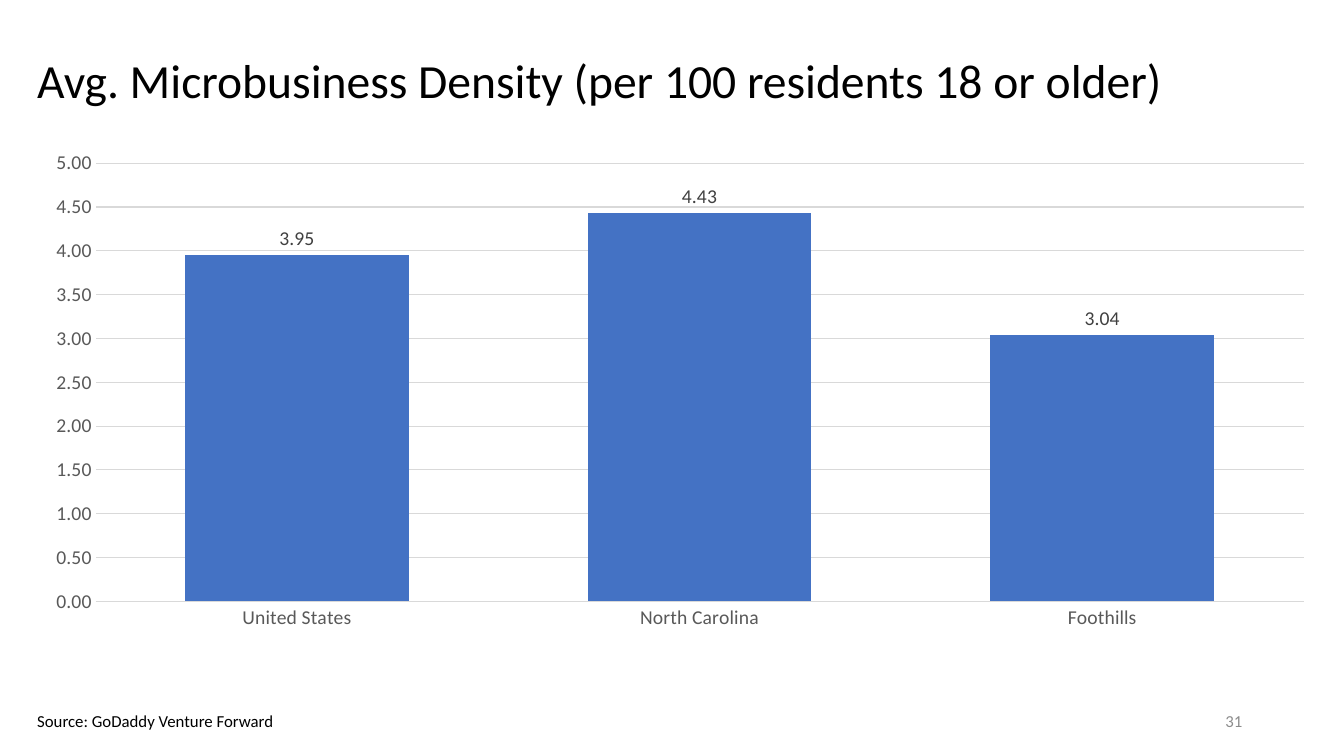
from dataclasses import dataclass

from lxml.etree import SubElement
from pptx import Presentation
from pptx.chart.data import CategoryChartData
from pptx.dml.color import RGBColor
from pptx.enum.chart import XL_CHART_TYPE, XL_LABEL_POSITION, XL_TICK_MARK
from pptx.enum.text import MSO_ANCHOR, PP_ALIGN
from pptx.oxml.ns import qn
from pptx.util import Inches, Pt


@dataclass(frozen=True)
class Theme:
    font: str = "Calibri"
    ink: str = "000000"
    label: str = "404040"
    axis: str = "595959"
    muted: str = "8C8C8C"
    grid: str = "D9D9D9"
    bar: str = "4472C4"
    head: int = 34
    body: int = 14
    small: int = 12
    rule: float = 0.75


class Deck:
    def __init__(self, theme, wide, high):
        self.theme = theme
        self.file = Presentation()
        self.file.slide_width = Inches(wide)
        self.file.slide_height = Inches(high)
        self.slide = self.file.slides.add_slide(self.file.slide_layouts[6])

    def place(self, left, top, width, height):
        """Turn percentages of the slide into lengths."""
        wide, high = self.file.slide_width, self.file.slide_height
        shares = (left, wide), (top, high), (width, wide), (height, high)
        return [int(share * side / 100) for share, side in shares]

    def style(self, font, size, color):
        font.name = self.theme.font
        font.size = Pt(size)
        font.color.rgb = RGBColor.from_string(color)

    def rule(self, line):
        line.color.rgb = RGBColor.from_string(self.theme.grid)
        line.width = Pt(self.theme.rule)

    def text(self, words, box, size, color, align=PP_ALIGN.LEFT,
             anchor=MSO_ANCHOR.MIDDLE, wrap=True, space=1.0):
        frame = self.slide.shapes.add_textbox(*self.place(*box)).text_frame
        frame.word_wrap = wrap
        frame.vertical_anchor = anchor
        para = frame.paragraphs[0]
        para.text = words
        para.alignment = align
        para.line_spacing = space
        self.style(para.font, size, color)

    def columns(self, values, box, plot, gap):
        look = self.theme
        data = CategoryChartData(number_format="0.00")
        data.categories = list(values)
        data.add_series("Series 1", list(values.values()))
        chart = self.slide.shapes.add_chart(
            XL_CHART_TYPE.COLUMN_CLUSTERED, *self.place(*box), data).chart
        chart.has_legend = False
        chart.has_title = False
        self.style(chart.font, look.body, look.ink)

        # Axes and grid lines
        for axis in (chart.category_axis, chart.value_axis):
            axis.major_tick_mark = axis.minor_tick_mark = XL_TICK_MARK.NONE
            self.style(axis.tick_labels.font, look.body, look.axis)
        self.rule(chart.category_axis.format.line)
        scale = chart.value_axis
        scale.minimum_scale, scale.maximum_scale, scale.major_unit = 0, 5, 0.5
        scale.format.line.fill.background()
        self.rule(scale.major_gridlines.format.line)
        scale.tick_labels.number_format = "0.00"
        scale.tick_labels.number_format_is_linked = False

        # Bars and their values
        bars = chart.plots[0]
        bars.gap_width = gap
        bars.vary_by_categories = False
        fill = bars.series[0].format.fill
        fill.solid()
        fill.fore_color.rgb = RGBColor.from_string(look.bar)
        labels = bars.series[0].data_labels
        labels.show_value = True
        labels.position = XL_LABEL_POSITION.OUTSIDE_END
        labels.number_format = "0.00"
        labels.number_format_is_linked = False
        self.style(labels.font, look.body, look.label)

        # Inner plot area, as shares of the chart
        area = chart._chartSpace.chart.plotArea
        for old in area.findall(qn("c:layout")):
            area.remove(old)
        layout = SubElement(area, qn("c:layout"))
        area.insert(0, layout)
        manual = SubElement(layout, qn("c:manualLayout"))
        parts = [("layoutTarget", "inner"), ("xMode", "edge"), ("yMode", "edge")]
        for tag, value in parts + list(zip("xywh", plot)):
            SubElement(manual, qn(f"c:{tag}")).set("val", str(value))


def main():
    theme = Theme()
    deck = Deck(theme, 13.33, 7.5)

    # Title
    deck.text("Avg. Microbusiness Density (per 100 residents 18 or older)",
              (2.03, 2.67, 95.72, 16.53), theme.head, theme.ink, space=0.9)

    # Density by region
    density = {"United States": 3.95, "North Carolina": 4.43, "Foothills": 3.04}
    deck.columns(density, (2.03, 19.07, 96.02, 72),
                 plot=(0.053, 0.035, 0.936, 0.805), gap=80)

    # Footer
    deck.text("31", (70.67, 92.67, 22.5, 5.33), theme.small, theme.muted,
              align=PP_ALIGN.RIGHT)
    deck.text("Source: GoDaddy Venture Forward", (2.03, 93.33, 19.88, 4),
              theme.small, theme.ink, anchor=MSO_ANCHOR.TOP, wrap=False)

    deck.file.save("out.pptx")


if __name__ == "__main__":
    main()
